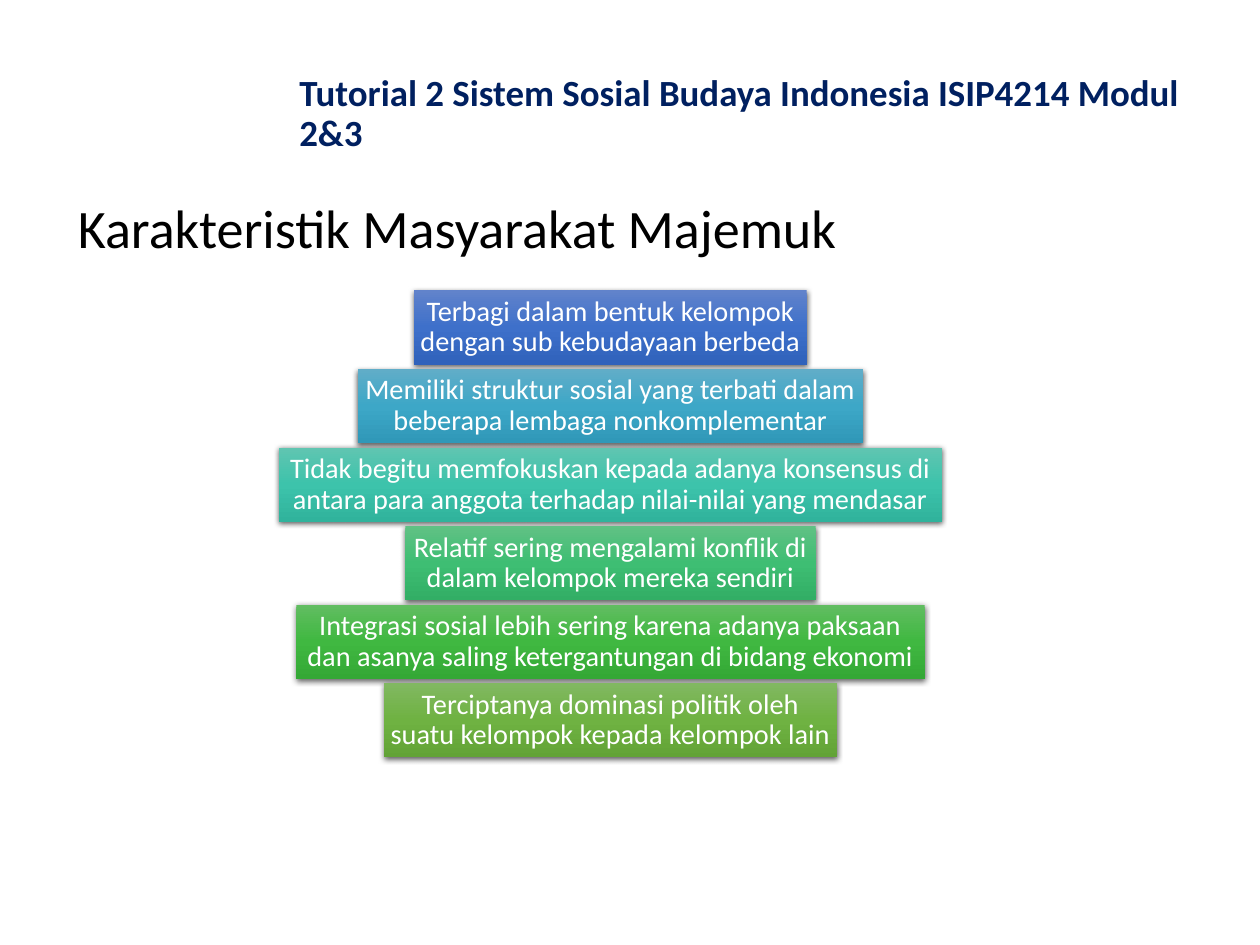
import copy

import pptx
import pptx.dml.color
import pptx.enum.shapes
import pptx.enum.text
import pptx.oxml
import pptx.oxml.ns
import pptx.util

RGB = pptx.dml.color.RGBColor
Inches = pptx.util.Inches
SLIDE_WIDTH, SLIDE_HEIGHT = 14.22, 10.67
NAVY = RGB(0x00, 0x20, 0x60)
BLACK = RGB(0x00, 0x00, 0x00)
WHITE = RGB(0xFF, 0xFF, 0xFF)
BLUES = RGB(0x61, 0x83, 0xCB), RGB(0x3E, 0x70, 0xCA), RGB(0x30, 0x62, 0xBB)
CYANS = RGB(0x61, 0xAD, 0xC8), RGB(0x3D, 0xA7, 0xC7), RGB(0x30, 0x98, 0xB8)
TEALS = RGB(0x60, 0xC5, 0xB1), RGB(0x3D, 0xC3, 0xAB), RGB(0x30, 0xB3, 0x9C)
JADES = RGB(0x60, 0xC1, 0x84), RGB(0x3E, 0xBE, 0x73), RGB(0x32, 0xAE, 0x65)
GREENS = RGB(0x61, 0xBD, 0x61), RGB(0x40, 0xB8, 0x41), RGB(0x34, 0xA8, 0x35)
OLIVES = RGB(0x81, 0xB8, 0x61), RGB(0x6F, 0xB2, 0x42), RGB(0x62, 0xA3, 0x36)

TRAITS = [
    ("Terbagi dalam bentuk kelompok dengan sub kebudayaan berbeda", 4.43, BLUES),
    ("Memiliki struktur sosial yang terbati dalam beberapa lembaga nonkomplementar", 5.71, CYANS),
    ("Tidak begitu memfokuskan kepada adanya konsensus di antara para anggota "
     "terhadap nilai-nilai yang mendasar", 7.48, TEALS),
    ("Relatif sering mengalami konflik di dalam kelompok mereka sendiri", 4.63, JADES),
    ("Integrasi sosial lebih sering karena adanya paksaan dan asanya saling "
     "ketergantungan di bidang ekonomi", 7.09, GREENS),
    ("Terciptanya dominasi politik oleh suatu kelompok kepada kelompok lain", 5.12, OLIVES),
]
SHADOW = (
    f'<a:outerShdw {pptx.oxml.ns.nsdecls("a")} blurRad="57150" dist="19050" dir="5400000" '
    'algn="ctr" rotWithShape="0"><a:srgbClr val="000000"><a:alpha val="63000"/>'
    '</a:srgbClr></a:outerShdw>'
)


def write(frame, text, size, color, bold=False, align=pptx.enum.text.PP_ALIGN.LEFT):
    """Fill a text frame with one vertically centred paragraph."""
    frame.word_wrap = True
    frame.vertical_anchor = pptx.enum.text.MSO_ANCHOR.MIDDLE
    frame.text = text
    paragraph = frame.paragraphs[0]
    paragraph.alignment = align
    paragraph.line_spacing = 0.9
    font = paragraph.runs[0].font
    font.name, font.size, font.bold = "Calibri", pptx.util.Pt(size), bold
    font.color.rgb = color


def add_heading(slide, box, text, size, color, bold=False):
    """Add a heading in the given box."""
    heading = slide.shapes.add_textbox(*map(Inches, box))
    write(heading.text_frame, text, size, color, bold)


def shade(bar, colors):
    """Give a bar a downward gradient and a soft shadow."""
    bar.line.fill.background()
    bar.fill.gradient()
    bar.fill.gradient_angle = 270
    properties = bar._element.spPr
    stop_list = properties.find(".//" + pptx.oxml.ns.qn("a:gsLst"))
    stop_list.insert(1, copy.deepcopy(stop_list[0]))
    for stop, position, color in zip(bar.fill.gradient_stops, (0, 0.5, 1), colors):
        stop.position = position
        stop.color.rgb = color
    bar.shadow.inherit = False
    effects = properties.find(pptx.oxml.ns.qn("a:effectLst"))
    effects.append(pptx.oxml.parse_xml(SHADOW))


def add_trait_stack(slide, box, traits):
    """Stack centred bars of differing widths in equal rows of the box."""
    left, top, width, height = box
    gap = 0.05
    bar_height = (height - gap * (len(traits) - 1)) / len(traits)
    for row, (text, bar_width, colors) in enumerate(traits):
        bar = slide.shapes.add_shape(
            pptx.enum.shapes.MSO_SHAPE.RECTANGLE,
            Inches(left + (width - bar_width) / 2),
            Inches(top + row * (bar_height + gap)),
            Inches(bar_width), Inches(bar_height),
        )
        shade(bar, colors)
        frame = bar.text_frame
        frame.margin_left = frame.margin_right = Inches(0.06)
        frame.margin_top = frame.margin_bottom = Inches(0.06)
        write(frame, text, 23, WHITE, align=pptx.enum.text.PP_ALIGN.CENTER)


def main():
    """Build and save the slide."""
    deck = pptx.Presentation()
    deck.slide_width, deck.slide_height = Inches(SLIDE_WIDTH), Inches(SLIDE_HEIGHT)
    slide = deck.slides.add_slide(deck.slide_layouts[6])
    add_heading(slide, (0.78, 2.08, 11.3, 1.05), "Karakteristik Masyarakat Majemuk", 44, BLACK)
    add_trait_stack(slide, (3.15, 3.28, 7.48, 5.27), TRAITS)
    add_heading(slide, (3.28, 0.67, 10.94, 1.25),
                "Tutorial 2 Sistem Sosial Budaya Indonesia ISIP4214 Modul 2&3", 30, NAVY, bold=True)
    deck.save("out.pptx")


if __name__ == "__main__":
    main()
